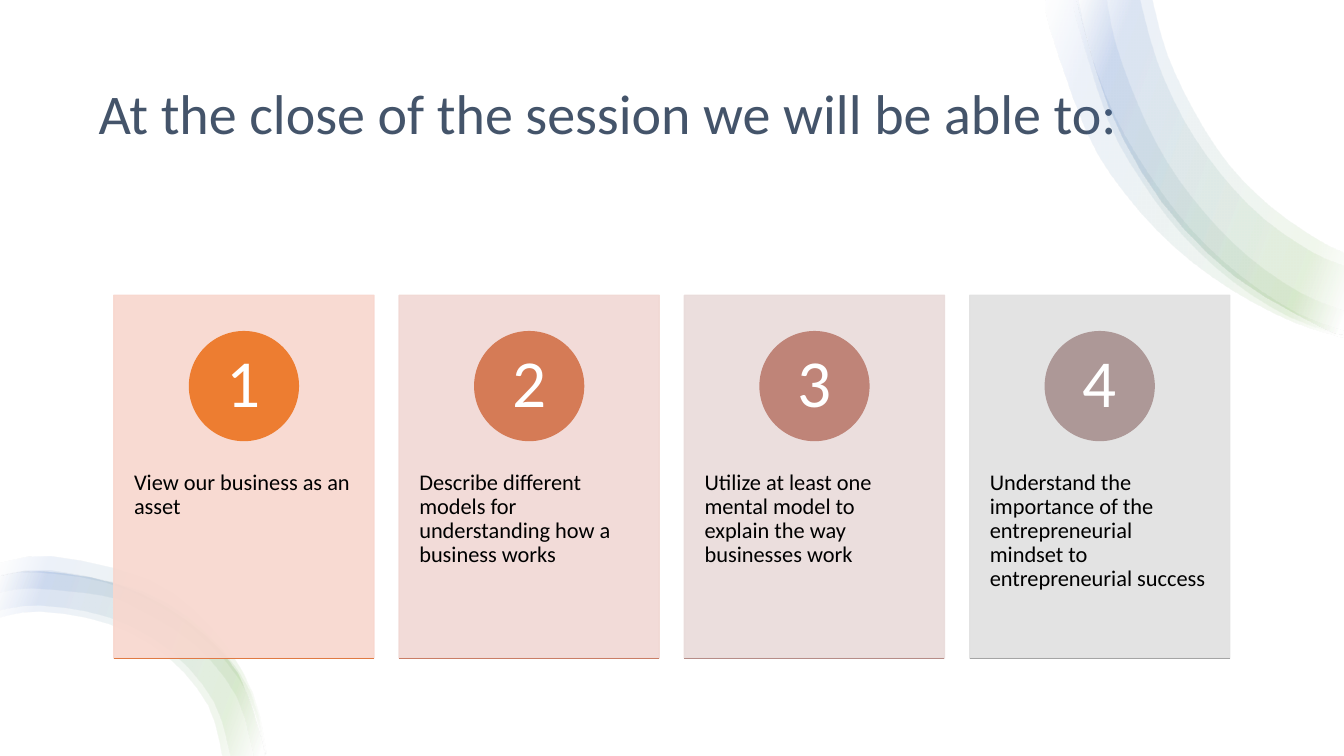
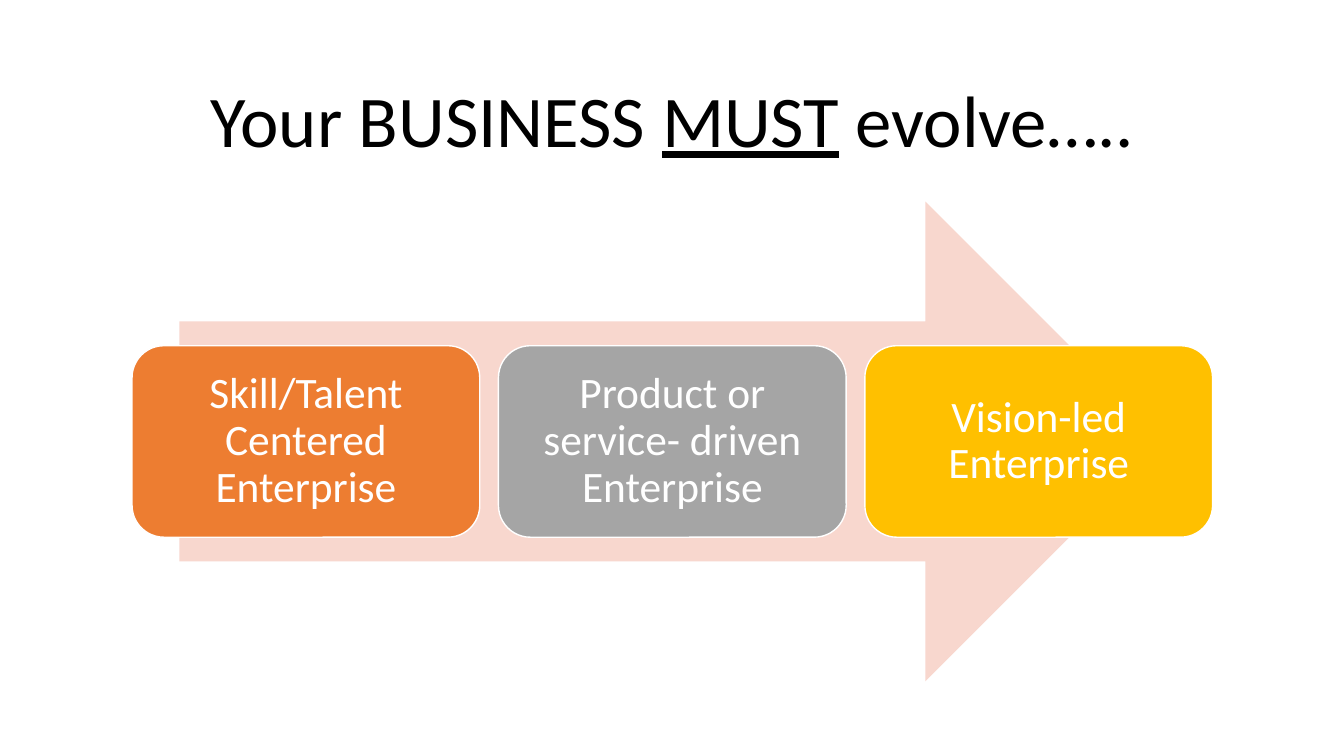
from dataclasses import dataclass

from lxml import etree
from pptx import Presentation
from pptx.dml.color import RGBColor
from pptx.enum.shapes import MSO_CONNECTOR, MSO_SHAPE
from pptx.enum.text import MSO_ANCHOR, PP_ALIGN
from pptx.oxml import parse_xml
from pptx.oxml.ns import nsdecls, qn
from pptx.util import Inches, Pt

# Shared style
WIDE, HIGH = 40 / 3, 7.5
FONT = "Calibri"
WHITE, BLACK, SLATE = "FFFFFF", "000000", "44546A"
ORANGE, GRAY, GOLD, PEACH = "ED7D31", "A5A5A5", "FFC000", "F8D7CE"
STOPS = ((2, WHITE), (16, "70AD47"), (85, "4472C4"), (100, WHITE))
Edge = list[tuple[float, float]]


@dataclass
class Box:
    left: float
    top: float
    width: float
    height: float

    def emu(self) -> list[int]:
        return [Inches(v) for v in (self.left, self.top, self.width, self.height)]


@dataclass
class Run:
    text: str
    under: bool = False


@dataclass
class Style:
    size: float
    color: str
    align: PP_ALIGN = PP_ALIGN.LEFT
    anchor: MSO_ANCHOR = MSO_ANCHOR.MIDDLE
    insets: tuple[float, float, float, float] = (0.1, 0.05, 0.1, 0.05)


@dataclass
class Card:
    text: str
    fill: str
    disc: str
    rule: str


@dataclass
class Stage:
    text: str
    fill: str


@dataclass
class Band:
    outer: Edge
    inner: Edge


def paint(target, color: str) -> None:
    target.solid()
    target.fore_color.rgb = RGBColor.from_string(color)


def fade(fill, percent: int) -> None:
    """Make a solid fill partly transparent."""
    tag = fill.find(".//" + qn("a:srgbClr"))
    etree.SubElement(tag, qn("a:alpha")).set("val", str(percent * 1000))


def write(shape, runs: list[Run], style: Style) -> None:
    frame = shape.text_frame
    frame.word_wrap = True
    frame.vertical_anchor = style.anchor
    (frame.margin_left, frame.margin_top,
     frame.margin_right, frame.margin_bottom) = map(Inches, style.insets)
    para = frame.paragraphs[0]
    para.alignment = style.align
    para.line_spacing = 0.9
    for item in runs:
        run = para.add_run()
        run.text = item.text
        run.font.name = FONT
        run.font.size = Pt(style.size)
        run.font.underline = item.under
        run.font.color.rgb = RGBColor.from_string(style.color)


def add_title(slide, box: Box, runs: list[Run], style: Style) -> None:
    write(slide.shapes.add_textbox(*box.emu()), runs, style)


def add_shape(slide, kind: MSO_SHAPE, box: Box, fill: str, line: str | None = None):
    shape = slide.shapes.add_shape(kind, *box.emu())
    shape.shadow.inherit = False
    paint(shape.fill, fill)
    if line:
        paint(shape.line.fill, line)
        shape.line.width = Pt(1)
    else:
        shape.line.fill.background()
    return shape


def add_rule(slide, left: float, right: float, top: float, color: str) -> None:
    rule = slide.shapes.add_connector(
        MSO_CONNECTOR.STRAIGHT, Inches(left), Inches(top), Inches(right), Inches(top))
    paint(rule.line.fill, color)
    rule.line.width = Pt(1)
    etree.SubElement(rule._element.spPr, qn("a:effectLst"))


# Curved corner bands
def smooth(knots: Edge, steps: int = 3) -> Edge:
    """Sample a Catmull-Rom curve through the knots."""
    ends = [knots[0], *knots, knots[-1]]
    curve = [knots[0]]
    for a, b, c, d in zip(ends, ends[1:], ends[2:], ends[3:]):
        for step in range(1, steps + 1):
            t = step / steps
            x, y = (
                (2 * q + (r - p) * t + (2 * p - 5 * q + 4 * r - s) * t ** 2
                 + (3 * q - p - 3 * r + s) * t ** 3) / 2
                for p, q, r, s in zip(a, b, c, d))
            curve.append((x, y))
    return curve


def add_band(slide, band: Band) -> None:
    points = [(Inches(x), Inches(y))
              for x, y in smooth(band.outer) + smooth(band.inner)[::-1]]
    pen = slide.shapes.build_freeform(*points[0])
    pen.add_line_segments(points[1:], close=True)
    shape = pen.convert_to_shape()
    shape.shadow.inherit = False
    shape.line.fill.background()
    stops = "".join(
        f'<a:gs pos="{pos * 1000}"><a:srgbClr val="{color}">'
        f'<a:alpha val="10000"/></a:srgbClr></a:gs>' for pos, color in STOPS)
    grad = parse_xml(
        f'<a:gradFill {nsdecls("a")}><a:gsLst>{stops}</a:gsLst>'
        f'<a:lin ang="{200 * 60000}" scaled="0"/></a:gradFill>')
    shape._element.spPr.find(qn("a:custGeom")).addnext(grad)


TOP = [(10.68, 0), (11, 1.07), (11.52, 2), (12.24, 2.74), (13.09, 3.24), (WIDE, 3.32)]
LOW = [(0, 5.72), (0.4, 5.67), (1.17, 5.8), (1.85, 6.16), (2.36, 6.69), (2.63, HIGH)]
BANDS = [
    # Upper right
    Band([(10.38, 0), (10.41, 0.26), (10.78, 1.31), (11.16, 1.92), (11.65, 2.45),
          (12.21, 2.87), (12.82, 3.19), (WIDE, 3.35)],
         [(10.7, 0), (10.82, 0.52), (11.06, 1.15), (11.4, 1.73), (11.81, 2.27),
          (12.3, 2.73), (12.86, 3.1), (WIDE, 3.28)]),
    Band(TOP, [(11.43, 0), (11.58, 0.55), (11.85, 1.12), (12.19, 1.64),
               (12.61, 2.06), (13.07, 2.38), (WIDE, 2.51)]),
    Band([(10.65, 0), (10.68, 0.2), (10.99, 1.19), (11.32, 1.79), (11.73, 2.33),
          (12.23, 2.79), (12.79, 3.14), (WIDE, 3.33)],
         [(10.98, 0), (11.07, 0.44), (11.29, 1.04), (11.58, 1.61), (11.95, 2.11),
          (12.39, 2.55), (12.9, 2.9), (WIDE, 3.08)]),
    Band(TOP, [(11.31, 0), (11.47, 0.59), (11.74, 1.19), (12.1, 1.72),
               (12.53, 2.17), (13.01, 2.5), (WIDE, 2.64)]),
    # Lower left
    Band(LOW, [(0, 6.13), (0.4, 6.07), (1.07, 6.19), (1.66, 6.52), (2.06, 7), (2.2, HIGH)]),
    Band(LOW, [(0, 6.06), (0.4, 6.01), (1.09, 6.13), (1.7, 6.47), (2.12, 6.97), (2.28, HIGH)]),
    Band([(0, 5.71), (0.5, 5.66), (1.42, 5.87), (2.03, 6.27), (2.47, 6.85), (2.63, HIGH)],
         [(0, 5.88), (0.33, 5.84), (1.01, 5.91), (1.34, 6.03), (1.92, 6.39),
          (2.34, 6.91), (2.51, HIGH)]),
    Band([(0, 5.59), (0.51, 5.52), (1.48, 5.75), (2.1, 6.23), (2.5, 6.87), (2.64, HIGH)],
         [(0, 5.72), (0.32, 5.68), (1.05, 5.78), (1.71, 6.09), (2.25, 6.58),
          (2.52, 7.05), (2.62, HIGH)]),
]

CARDS = [
    Card("View our business as an asset", PEACH, ORANGE, "E07A44"),
    Card("Describe different models for understanding how a business works",
         "F1D8D4", "D57B56", "CA7E67"),
    Card("Utilize at least one mental model to explain the way businesses work",
         "E9DBDA", "BF8478", "B68D88"),
    Card("Understand the importance of the entrepreneurial mindset to "
         "entrepreneurial success", "E1E1E1", "AD9897", GRAY),
]

STAGES = [
    Stage("Skill/Talent Centered Enterprise", ORANGE),
    Stage("Product or service- driven Enterprise", GRAY),
    Stage("Vision-led Enterprise", GOLD),
]


# Slide 1: numbered goals
def add_card(slide, index: int, card: Card) -> None:
    first, last = 1.13, 9.62
    step = (last - first) / (len(CARDS) - 1)
    box = Box(first + step * index, 2.93, 2.58, 3.6)
    disc = 1.08
    panel = add_shape(slide, MSO_SHAPE.RECTANGLE, box, card.fill, card.fill)
    fade(panel._element.spPr.find(qn("a:solidFill")), 90)
    fade(panel._element.spPr.find(qn("a:ln")), 90)
    write(panel, [Run(card.text)],
          Style(16, BLACK, anchor=MSO_ANCHOR.TOP, insets=(0.2, 1.74, 0.2, 0.36)))
    badge = add_shape(
        slide, MSO_SHAPE.OVAL,
        Box(box.left + (box.width - disc) / 2, box.top + 0.36, disc, disc),
        card.disc, card.disc)
    write(badge, [Run(str(index + 1))],
          Style(48, WHITE, PP_ALIGN.CENTER, insets=(0.08, 0.01, 0.08, 0.01)))
    add_rule(slide, box.left, box.left + box.width, box.top + box.height, card.rule)


def draw_goals(slide) -> None:
    add_shape(slide, MSO_SHAPE.RECTANGLE, Box(0, 0, WIDE, HIGH), WHITE)
    add_title(slide, Box(0.88, 0.5, 11.57, 1.3),
              [Run("At the close of the session we will be able to:")], Style(40, SLATE))
    for band in BANDS:
        add_band(slide, band)
    for index, card in enumerate(CARDS):
        add_card(slide, index, card)


# Slide 2: stages on an arrow
def draw_stages(slide) -> None:
    add_title(slide, Box(0.92, 0.61, 11.5, 1.24),
              [Run("Your BUSINESS "), Run("MUST", True), Run(" evolve…..")],
              Style(52, BLACK, PP_ALIGN.CENTER))
    add_shape(slide, MSO_SHAPE.RIGHT_ARROW, Box(1.78, 2, 9.78, 4.76), PEACH)
    first, last = 1.31, 8.58
    step = (last - first) / (len(STAGES) - 1)
    for index, stage in enumerate(STAGES):
        box = Box(first + index * step, 3.43, 3.45, 1.9)
        shape = add_shape(slide, MSO_SHAPE.ROUNDED_RECTANGLE, box, stage.fill, WHITE)
        write(shape, [Run(stage.text)],
              Style(31, WHITE, PP_ALIGN.CENTER, insets=(0.13,) * 4))


def main() -> None:
    deck = Presentation()
    deck.slide_width, deck.slide_height = Inches(WIDE), Inches(HIGH)
    for draw in (draw_goals, draw_stages):
        draw(deck.slides.add_slide(deck.slide_layouts[6]))
    deck.save("out.pptx")


if __name__ == "__main__":
    main()
